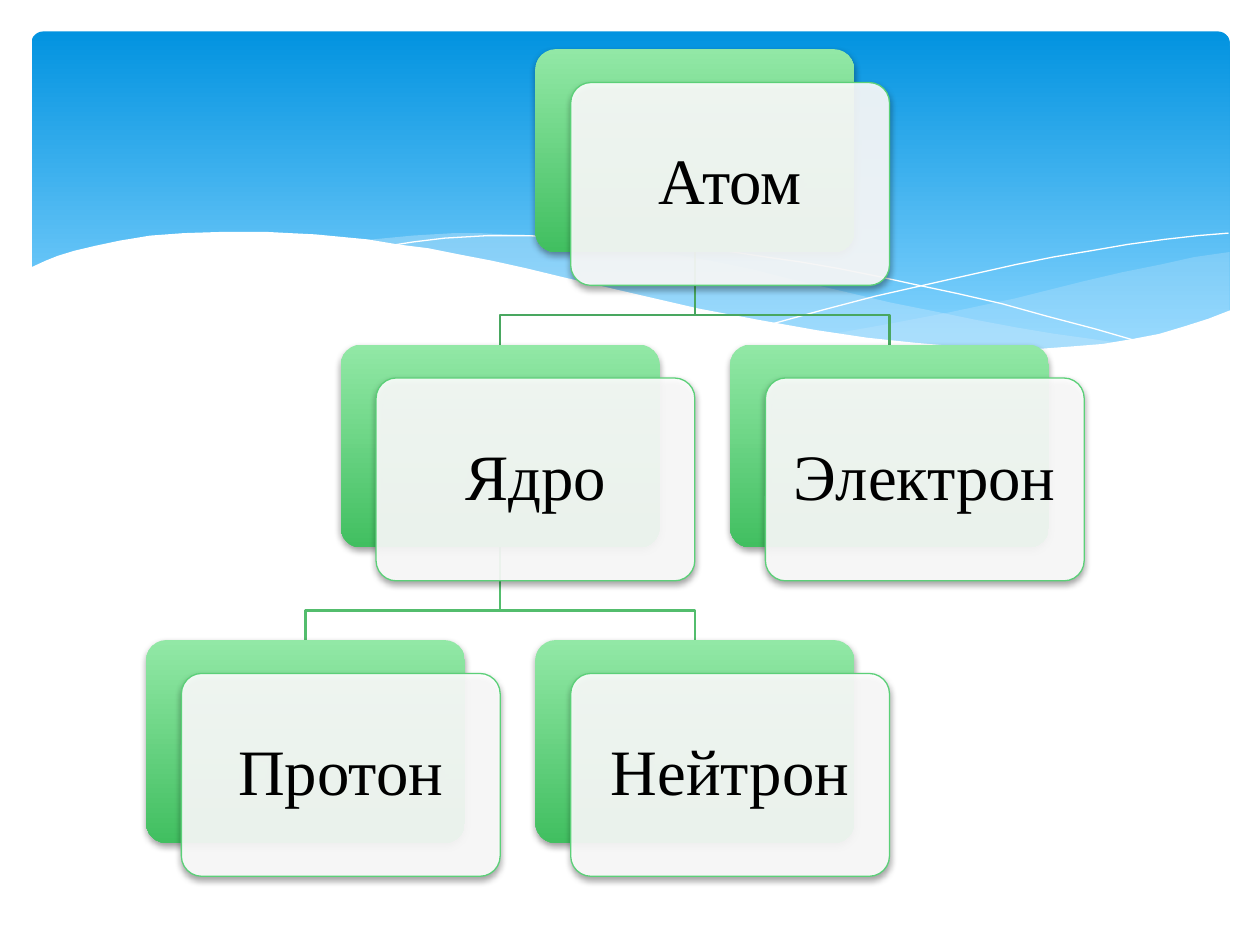
from lxml import etree
from pptx import Presentation
from pptx.dml.color import RGBColor
from pptx.enum.shapes import MSO_SHAPE as Shape
from pptx.enum.text import MSO_ANCHOR as Anchor, PP_ALIGN as Align
from pptx.oxml.ns import qn
from pptx.util import Inches, Pt

CARD_W, CARD_H = 2.53, 1.61
LEFT, TOP = 1.16, 0.39
COLUMN_STEP, ROW_STEP = 1.545, 2.345
FRONT_DX, FRONT_DY = 0.28, 0.265
BEND_Y = 0.5

# name: (label, column, row)
PARTICLES = {
    "atom": ("Атом", 2, 0),
    "nucleus": ("Ядро", 1, 1),
    "proton": ("Протон", 0, 2),
    "neutron": ("Нейтрон", 2, 2),
    "electron": ("Электрон", 3, 1),
}
LINKS = [
    ("atom", "electron", "49A760"),
    ("nucleus", "neutron", "53BD6D"),
    ("nucleus", "proton", "53BD6D"),
    ("atom", "nucleus", "49A760"),
]

RIGHT_WAVE = [
    (9.76, 2), (9.48, 2.04), (9.21, 2.1), (8.91, 2.16), (8.61, 2.23),
    (8.05, 2.37), (7.53, 2.48), (7.06, 2.57), (6.61, 2.65), (6.91, 2.69),
    (7.19, 2.72), (7.45, 2.75), (7.69, 2.77), (8.03, 2.78), (8.35, 2.77),
    (8.63, 2.75), (8.89, 2.72), (9.13, 2.67), (9.35, 2.62), (9.49, 2.57),
    (9.63, 2.52), (9.76, 2.47)]
MIDDLE_WAVE = [
    (8.93, 2.73), (8.66, 2.69), (8.37, 2.65), (8.07, 2.6), (7.75, 2.54),
    (7.41, 2.47), (7.06, 2.4), (6.68, 2.31), (6.29, 2.22), (5.98, 2.14),
    (5.69, 2.08), (5.41, 2.03), (5.14, 1.98), (4.89, 1.94), (4.65, 1.91),
    (4.42, 1.89), (4.2, 1.87), (3.99, 1.86), (3.8, 1.85), (3.61, 1.85),
    (3.28, 1.87), (2.86, 1.91), (3.23, 1.96), (3.62, 2.03), (4.04, 2.11),
    (4.49, 2.22), (4.91, 2.32), (5.3, 2.4), (5.66, 2.48), (6.01, 2.55),
    (6.34, 2.61), (6.65, 2.66), (6.95, 2.7), (7.22, 2.74), (7.48, 2.76),
    (7.73, 2.77), (7.96, 2.78), (8.28, 2.78), (8.57, 2.77), (8.76, 2.75)]
FALLING_LINE = [
    (3.09, 1.95), (3.28, 1.92), (3.53, 1.89), (3.87, 1.87), (4.16, 1.87),
    (4.5, 1.88), (4.89, 1.9), (5.1, 1.92), (5.33, 1.94), (5.56, 1.97),
    (5.82, 2), (6.08, 2.04), (6.36, 2.08), (6.65, 2.13), (6.95, 2.19),
    (7.27, 2.26), (7.6, 2.33), (7.95, 2.41), (8.31, 2.51), (8.69, 2.61),
    (9.07, 2.72)]
RISING_LINE = [
    (6.13, 2.57), (6.53, 2.46), (6.95, 2.35), (7.48, 2.23), (8.06, 2.1),
    (8.36, 2.04), (8.66, 1.99), (8.95, 1.94), (9.24, 1.9), (9.51, 1.87),
    (9.75, 1.85)]
WHITE_WAVE = [
    (9.77, 2.46), (9.59, 2.53), (9.4, 2.59), (9.2, 2.65), (8.99, 2.69),
    (8.75, 2.73), (8.5, 2.75), (8.23, 2.77), (7.93, 2.76), (7.61, 2.75),
    (7.26, 2.72), (6.88, 2.68), (6.48, 2.62), (6.03, 2.54), (5.55, 2.45),
    (5.03, 2.33), (4.47, 2.2), (4.18, 2.13), (3.91, 2.07), (3.65, 2.02),
    (3.4, 1.97), (3.16, 1.94), (2.92, 1.9), (2.71, 1.88), (2.5, 1.86),
    (2.3, 1.85), (2.11, 1.84), (1.77, 1.84), (1.46, 1.85), (1.19, 1.87),
    (0.95, 1.91), (0.76, 1.95), (0.59, 1.99), (0.46, 2.03), (0.36, 2.07),
    (0.23, 2.13), (0.23, 3.29), (9.77, 3.29)]


def rgb(color):
    return RGBColor.from_string(color)


def fill_solid(shape, color, opacity=100):
    shape.fill.solid()
    shape.fill.fore_color.rgb = rgb(color)
    if opacity < 100:
        color_node = shape.fill._xPr.find(qn("a:solidFill"))[0]
        etree.SubElement(color_node, qn("a:alpha"), val=str(opacity * 1000))


def fill_downward(shape, *stops):
    """Vertical gradient; each stop is (position from the top, colour)."""
    shape.fill.gradient()
    shape.fill.gradient_angle = 270
    for stop, (position, color) in zip(shape.fill.gradient_stops, stops):
        stop.position = position
        stop.color.rgb = rgb(color)


def set_line(shape, color, width):
    shape.line.color.rgb = rgb(color)
    shape.line.width = Pt(width)


def add_shadow(shape):
    effects = shape._element.spPr.find(qn("a:effectLst"))
    shadow = etree.SubElement(
        effects, qn("a:outerShdw"), blurRad=str(Pt(4)), dist=str(Pt(2)),
        dir="5400000", rotWithShape="0")
    black = etree.SubElement(shadow, qn("a:srgbClr"), val="000000")
    etree.SubElement(black, qn("a:alpha"), val="38000")


def add_round_box(slide, left, top, width, height, rounding):
    box = slide.shapes.add_shape(
        Shape.ROUNDED_RECTANGLE, Inches(left), Inches(top), Inches(width), Inches(height))
    box.adjustments[0] = rounding
    box.shadow.inherit = False
    box.line.fill.background()
    return box


def add_outline(slide, points, close):
    start, *rest = [(Inches(x), Inches(y)) for x, y in points]
    builder = slide.shapes.build_freeform(*start)
    builder.add_line_segments(rest, close=close)
    outline = builder.convert_to_shape()
    outline.shadow.inherit = False
    return outline


def add_wave(slide, points, color, opacity=100):
    wave = add_outline(slide, points, close=True)
    fill_solid(wave, color, opacity)
    wave.line.fill.background()


def add_open_line(slide, points, color, width):
    line = add_outline(slide, points, close=False)
    line.fill.background()
    set_line(line, color, width)


def add_backdrop(slide):
    sky = add_round_box(slide, 0.25, 0.25, 9.51, 2.7, 0.034)
    fill_downward(sky, (0, "0293E0"), (0.9, "83D3FE"))
    add_wave(slide, RIGHT_WAVE, "C6E7FC", 29)
    add_wave(slide, MIDDLE_WAVE, "C6E7FC", 40)
    for curve in (FALLING_LINE, RISING_LINE):
        add_open_line(slide, curve, "FFFFFF", 0)
    add_wave(slide, WHITE_WAVE, "FFFFFF")


def card_corner(column, row):
    return LEFT + column * COLUMN_STEP, TOP + row * ROW_STEP


def add_link(slide, parent, child, color):
    """Stepped line from the foot of the parent to the head of the child."""
    parent_x, parent_y = card_corner(*PARTICLES[parent][1:])
    child_x, child_y = card_corner(*PARTICLES[child][1:])
    start_x, end_x = parent_x + CARD_W / 2, child_x + CARD_W / 2
    start_y = parent_y + CARD_H
    bend_y = start_y + BEND_Y
    steps = [(start_x, start_y), (start_x, bend_y), (end_x, bend_y), (end_x, child_y)]
    add_open_line(slide, steps, color, 1.25)


def add_card(slide, label, column, row):
    left, top = card_corner(column, row)
    back = add_round_box(slide, left, top, CARD_W, CARD_H, 0.1)
    fill_downward(back, (0, "92E8A6"), (1, "41BF60"))
    add_shadow(back)

    front = add_round_box(slide, left + FRONT_DX, top + FRONT_DY, CARD_W, CARD_H, 0.1)
    fill_solid(front, "FFFFFF", 90)
    set_line(front, "5BD078", 0.75)
    add_shadow(front)

    frame = front.text_frame
    frame.text = label
    frame.word_wrap = True
    frame.vertical_anchor = Anchor.MIDDLE
    frame.margin_left = frame.margin_right = Inches(0.15)
    frame.margin_top = frame.margin_bottom = Inches(0.15)
    paragraph = frame.paragraphs[0]
    paragraph.alignment = Align.CENTER
    paragraph.line_spacing = 0.9
    font = paragraph.runs[0].font
    font.name, font.size = "Times New Roman", Pt(37)
    font.color.rgb = rgb("000000")


def main():
    deck = Presentation()
    deck.slide_width, deck.slide_height = Inches(10), Inches(7.5)
    slide = deck.slides.add_slide(deck.slide_layouts[6])
    add_backdrop(slide)
    for link in LINKS:
        add_link(slide, *link)
    for particle in PARTICLES.values():
        add_card(slide, *particle)
    deck.save("out.pptx")


if __name__ == "__main__":
    main()
